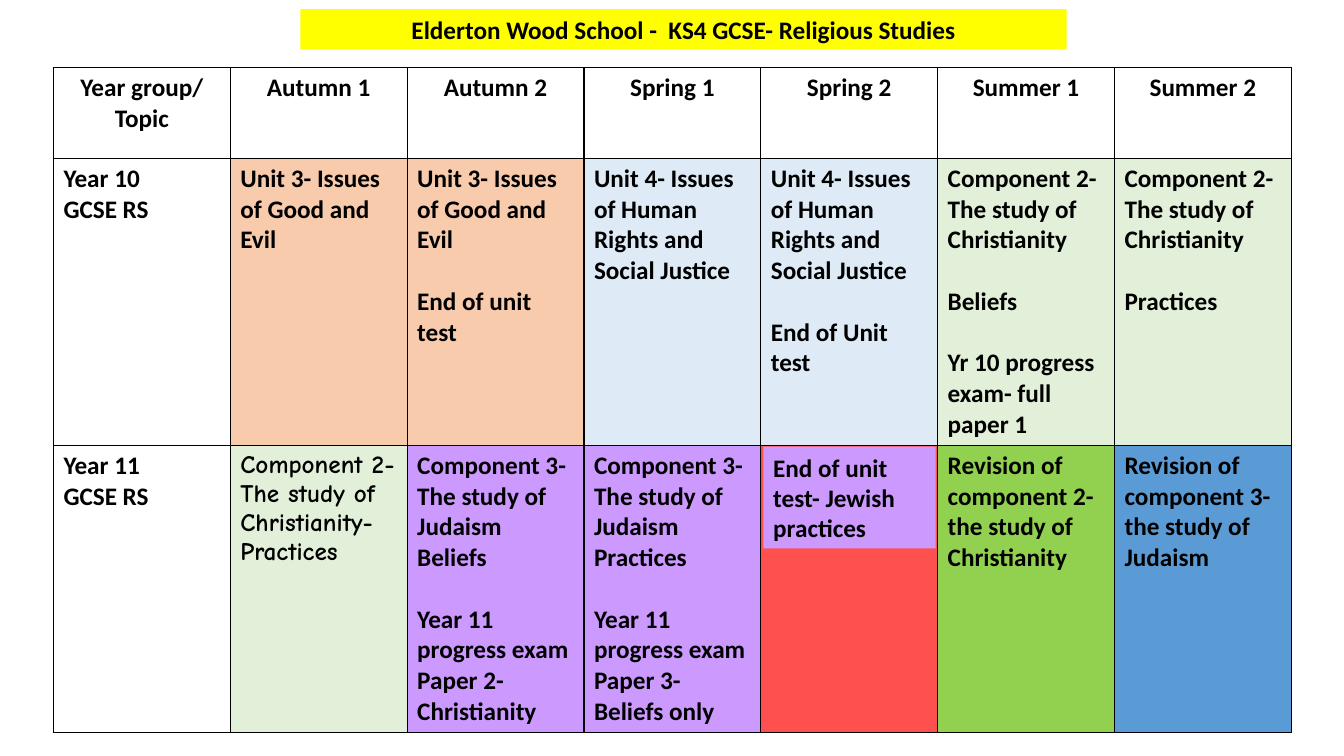
from lxml import etree
from pptx import Presentation
from pptx.dml.color import RGBColor
from pptx.enum.shapes import MSO_SHAPE
from pptx.enum.text import MSO_ANCHOR, PP_ALIGN
from pptx.oxml.ns import qn
from pptx.util import Inches, Pt

RECT = MSO_SHAPE.RECTANGLE
MIDDLE = MSO_ANCHOR.MIDDLE
CENTER, LEFT = PP_ALIGN.CENTER, PP_ALIGN.LEFT

THEME = {
    "ink": "000000", "white": "FFFFFF", "yellow": "FFFF00",
    "peach": "F8CBAD", "pale": "DEEBF7", "mint": "E2F0D9",
    "purple": "CC99FF", "red": "FF5050", "green": "92D050", "blue": "5B9BD5",
    "font": "Calibri", "comic": "Comic Neue", "size": Pt(18), "gap": Pt(22),
}
FORMAT = {"name": THEME["font"], "size": THEME["size"], "bold": True}


def paint(item, hue):
    item.fill.solid()
    item.fill.fore_color.rgb = RGBColor.from_string(THEME[hue])


def write(frame, text, align=LEFT, **extra):
    frame.word_wrap = True
    first = True
    for block, part in enumerate(text.split("\n\n")):
        for row, line in enumerate(part.split("\n")):
            para = frame.paragraphs[0] if first else frame.add_paragraph()
            first = False
            para.alignment = align
            para.space_before = THEME["gap"] if block and not row else Pt(0)
            run = para.add_run()
            run.text = line
            for key, value in {**FORMAT, **extra}.items():
                setattr(run.font, key, value)
            run.font.color.rgb = RGBColor.from_string(THEME["ink"])


deck = Presentation()
deck.slide_width, deck.slide_height = Inches(13.33), Inches(7.5)
slide = deck.slides.add_slide(deck.slide_layouts[5])

LEFT_EDGE, TOP, WIDTH = 0.53, 0.67, 12.28
ROWS = [0.9, 2.84, 2.8]
HEADS = ["Year group/ Topic"] + [
    f"{term} {half}" for term in ("Autumn", "Spring", "Summer") for half in (1, 2)]
EVIL = "Unit 3- Issues of Good and Evil"
RIGHTS = "Unit 4- Issues of Human Rights and Social Justice"
CHRIST = "Component 2- The study of Christianity"
JUDA = "Component 3- The study of Judaism"
EXAM = "Year 11 progress exam"

GRID = [
    [(head, "white") for head in HEADS],
    [
        ("Year 10\nGCSE RS", "white"),
        (EVIL, "peach"),
        (f"{EVIL}\n\nEnd of unit test", "peach"),
        (RIGHTS, "pale"),
        (f"{RIGHTS}\n\nEnd of Unit test", "pale"),
        (f"{CHRIST}\n\nBeliefs\n\nYr 10 progress exam- full paper 1", "mint"),
        (f"{CHRIST}\n\nPractices", "mint"),
    ],
    [
        ("Year 11\nGCSE RS", "white"),
        (f"{CHRIST}-\nPractices", "mint"),
        (f"{JUDA}\nBeliefs\n\n{EXAM}\nPaper 2- Christianity", "purple"),
        (f"{JUDA}\nPractices\n\n{EXAM}\nPaper 3- Beliefs only", "purple"),
        ("", "red"),
        ("Revision of component 2- the study of\nChristianity", "green"),
        ("Revision of component 3- the study of\nJudaism", "blue"),
    ],
]

table = slide.shapes.add_table(
    len(ROWS), len(HEADS), Inches(LEFT_EDGE), Inches(TOP),
    Inches(WIDTH), Inches(sum(ROWS))).table
table.first_row = table.horz_banding = False
for row, height in zip(table.rows, ROWS):
    row.height = Inches(height)
for col in table.columns:
    col.width = Inches(WIDTH / len(HEADS))

for r, cells in enumerate(GRID):
    for c, (text, hue) in enumerate(cells):
        cell = table.cell(r, c)
        props = cell._tc.get_or_add_tcPr()
        for side in ("lnL", "lnR", "lnT", "lnB"):
            line = etree.SubElement(props, qn(f"a:{side}"), w=str(Pt(1)))
            solid = etree.SubElement(line, qn("a:solidFill"))
            etree.SubElement(solid, qn("a:srgbClr"), val=THEME["ink"])
        paint(cell, hue)
        if text:
            face = THEME["comic"] if (r, c) == (2, 1) else THEME["font"]
            write(cell.text_frame, text, LEFT if r else CENTER, name=face)

title = slide.shapes.title
note = slide.shapes.add_shape(RECT, 0, 0, 0, 0)
note.shadow.inherit = False
note.line.fill.background()
BOXES = [
    (title, (2.98, 0.09, 7.6, 0.4), "yellow", CENTER,
     "Elderton Wood School -  KS4 GCSE- Religious Studies"),
    (note, (7.57, 4.43, 1.71, 1.01), "purple", LEFT,
     "End of unit test- Jewish practices"),
]
for box, place, hue, align, text in BOXES:
    for key, value in zip(("left", "top", "width", "height"), place):
        setattr(box, key, Inches(value))
    paint(box, hue)
    box.text_frame.vertical_anchor = MIDDLE
    write(box.text_frame, text, align)

deck.save("out.pptx")
